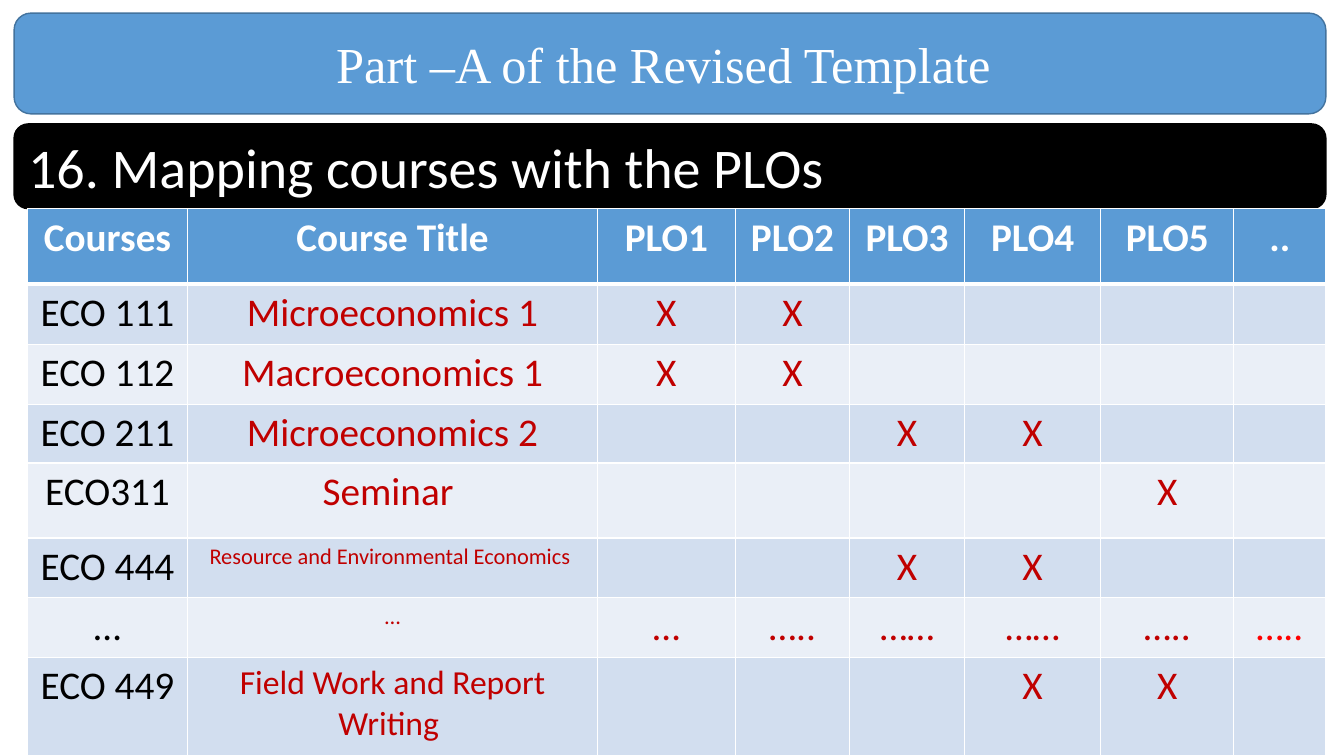
from lxml import etree
from pptx import Presentation
from pptx.dml.color import RGBColor
from pptx.enum.shapes import MSO_SHAPE
from pptx.enum.text import MSO_ANCHOR, PP_ALIGN
from pptx.oxml.ns import qn
from pptx.util import Inches, Pt

ROUNDED = MSO_SHAPE.ROUNDED_RECTANGLE
MIDDLE = MSO_ANCHOR.MIDDLE
LEFT, CENTER = PP_ALIGN.LEFT, PP_ALIGN.CENTER

WHITE, BLACK, BLUE, BLUE_EDGE = "FFFFFF", "000000", "5B9BD5", "43739E"
BAND_DARK, BAND_LIGHT = "D2DEEF", "EAEFF7"
DARK_RED, RED = "C00000", "FF0000"

# Relative column widths and row heights of the mapping table
COLUMNS = [1.59, 4.06, 1.37, 1.13, 1.14, 1.35, 1.32, 0.91]
ROWS = [0.74, 0.6, 0.59, 0.58, 0.74, 0.59, 0.59, 0.97]

HEADINGS = ["Courses", "Course Title", "PLO1", "PLO2", "PLO3", "PLO4", "PLO5", ".."]
# Code, title, title size, marks by PLO column
COURSES = [
    ("ECO 111", "Microeconomics 1", 28, ["X", "X", "", "", "", ""]),
    ("ECO 112", "Macroeconomics 1", 28, ["X", "X", "", "", "", ""]),
    ("ECO 211", "Microeconomics 2", 28, ["", "", "X", "X", "", ""]),
    ("ECO311", "Seminar ", 28, ["", "", "", "", "X", ""]),
    ("ECO 444", "Resource and Environmental Economics ", 16, ["", "", "X", "X", "", ""]),
    ("…", "…", 16, ["…", "…..", "……", "……", "…..", "….."]),
    ("ECO 449", "Field Work and Report Writing ", 24, ["", "", "", "X", "X", ""]),
]


def rgb(value):
    return RGBColor.from_string(value)


class SlideBuilder:
    """Holds the style and the current slide; boxes are in percent of the slide."""

    font = "Calibri"
    body_size = 28

    def __init__(self, prs):
        self.width, self.height = prs.slide_width, prs.slide_height
        self.slide = prs.slides.add_slide(prs.slide_layouts[6])

    def box(self, left, top, width, height):
        return (int(self.width * left / 100), int(self.height * top / 100),
                int(self.width * width / 100), int(self.height * height / 100))

    def set_text(self, tf, text, size, color, align=CENTER, bold=False, font=None):
        tf.text = text
        p = tf.paragraphs[0]
        p.alignment = align
        for r in p.runs:
            r.font.name = font or self.font
            r.font.size = Pt(size)
            r.font.bold = bold
            r.font.color.rgb = rgb(color)

    def banner(self, box, fill, line, text, size, align, font=None):
        sp = self.slide.shapes.add_shape(ROUNDED, *self.box(*box))
        sp.shadow.inherit = False
        sp.fill.solid()
        sp.fill.fore_color.rgb = rgb(fill)
        sp.line.color.rgb = rgb(line)
        sp.line.width = Pt(1)
        sp.text_frame.word_wrap = True
        sp.text_frame.vertical_anchor = MIDDLE
        self.set_text(sp.text_frame, text, size, WHITE, align, font=font)

    def table(self, box, columns, rows):
        left, top, width, height = self.box(*box)
        tbl = self.slide.shapes.add_table(
            len(rows), len(columns), left, top, width, height).table
        tbl.first_row = tbl.horz_banding = False
        for col, share in zip(tbl.columns, columns):
            col.width = int(width * share / sum(columns))
        for row, share in zip(tbl.rows, rows):
            row.height = int(height * share / sum(rows))
        return tbl

    def border(self, cell, side, points):
        ln = etree.SubElement(cell._tc.get_or_add_tcPr(), qn("a:ln" + side))
        ln.set("w", str(Pt(points)))
        fill = etree.SubElement(ln, qn("a:solidFill"))
        etree.SubElement(fill, qn("a:srgbClr")).set("val", WHITE)

    def cell(self, cell, text, fill, color, size=body_size, bold=False, top=1, bottom=1):
        for side, points in (("L", 1), ("R", 1), ("T", top), ("B", bottom)):
            self.border(cell, side, points)
        cell.fill.solid()
        cell.fill.fore_color.rgb = rgb(fill)
        self.set_text(cell.text_frame, text, size, color, bold=bold)


def main():
    prs = Presentation()
    prs.slide_width, prs.slide_height = Inches(13.33), Inches(7.5)
    s = SlideBuilder(prs)

    # Title and section banners
    s.banner((1.05, 1.73, 97.6, 13.33), BLUE, BLUE_EDGE,
             "Part –A of the Revised Template ", 36, CENTER, "Times New Roman")
    s.banner((1.05, 16.4, 97.6, 11.2), BLACK, BLACK,
             "16. Mapping courses with the PLOs", 40, LEFT)

    # Table header
    tbl = s.table((2.03, 27.6, 96.62, 72.4), COLUMNS, ROWS)
    for j, heading in enumerate(HEADINGS):
        s.cell(tbl.cell(0, j), heading, BLUE, WHITE, bold=True, bottom=3)

    # Course rows in alternating bands
    for i, (code, title, title_size, marks) in enumerate(COURSES, start=1):
        band = BAND_DARK if i % 2 else BAND_LIGHT
        top = 3 if i == 1 else 1
        for j, text in enumerate([code, title, *marks]):
            color = {0: BLACK, len(COLUMNS) - 1: RED}.get(j, DARK_RED)
            size = title_size if j == 1 else s.body_size
            s.cell(tbl.cell(i, j), text, band, color, size, top=top)

    prs.save("out.pptx")


if __name__ == "__main__":
    main()
